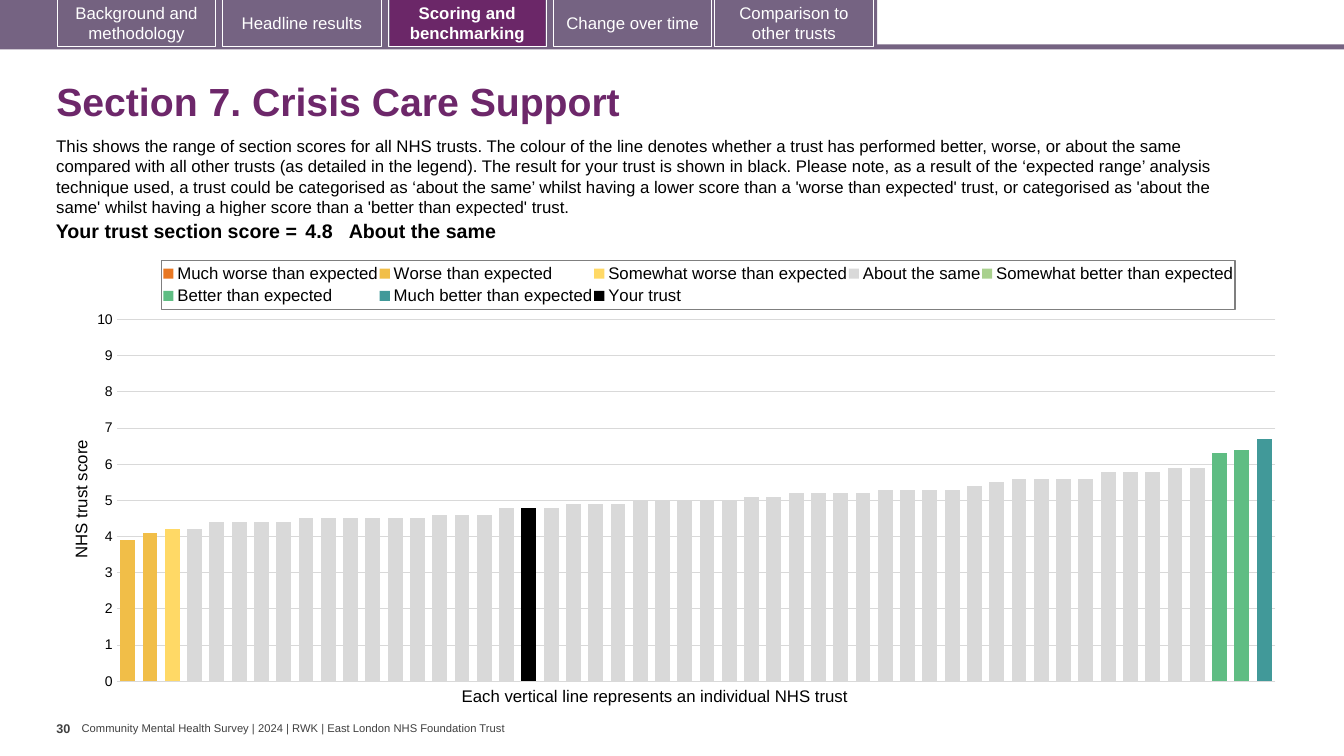
from copy import deepcopy
from lxml.etree import SubElement, Element
from pptx import Presentation
from pptx.chart.data import CategoryChartData
from pptx.dml.color import RGBColor
from pptx.enum.chart import XL_CHART_TYPE, XL_LEGEND_POSITION, XL_TICK_MARK
from pptx.enum.shapes import MSO_SHAPE
from pptx.enum.text import MSO_ANCHOR, PP_ALIGN
from pptx.oxml import parse_xml
from pptx.oxml.ns import nsdecls, qn
from pptx.util import Inches, Pt

INTRO = (
    "This shows the range of section scores for all NHS trusts. The colour of the line "
    "denotes whether a trust has performed better, worse, or about the same compared with "
    "all other trusts (as detailed in the legend). The result for your trust is shown in "
    "black. Please note, as a result of the ‘expected range’ analysis technique used, a "
    "trust could be categorised as ‘about the same’ whilst having a lower score than a "
    "'worse than expected' trust, or categorised as 'about the same' whilst having a higher "
    "score than a 'better than expected' trust."
)
TABS = [
    (0.57, "Background and methodology", "746280"),
    (2.21, "Headline results", None),
    (3.85, "Scoring and benchmarking", None),
    (5.49, "Change over time", "756382"),
    (7.09, "Comparison to other trusts", "756382"),
]
SAME = [
    4.2, 4.4, 4.4, 4.4, 4.4, 4.5, 4.5, 4.5, 4.5, 4.5, 4.5, 4.6, 4.6, 4.6, 4.8, 4.8,
    4.8, 4.9, 4.9, 4.9, 5, 5, 5, 5, 5, 5.1, 5.1, 5.2, 5.2, 5.2, 5.2, 5.3, 5.3, 5.3,
    5.3, 5.4, 5.5, 5.6, 5.6, 5.6, 5.6, 5.8, 5.8, 5.8, 5.9, 5.9,
]
COUNT = 52
BANDS = [
    ("Much worse than expected", "E87722", 0, []),
    ("Worse than expected", "F1BE48", 0, [3.9, 4.1]),
    ("Somewhat worse than expected", "FFD966", 2, [4.2]),
    ("About the same", "D9D9D9", 3, SAME),
    ("Somewhat better than expected", "A9D18E", 0, []),
    ("Better than expected", "5FBD83", 49, [6.3, 6.4]),
    ("Much better than expected", "419999", 51, [6.7]),
    ("Your trust", "000000", 18, [4.8]),
]


def shade(code):
    return RGBColor.from_string(code)


def style(font, size, color="000000", bold=False):
    font.name = "Arial"
    font.size = Pt(size)
    font.bold = bold
    font.color.rgb = shade(color)


def write(frame, text, size=12, color="000000", bold=False, align=PP_ALIGN.LEFT,
          anchor=MSO_ANCHOR.TOP, pad=(0.1, 0.05), space=1.0):
    frame.word_wrap = True
    frame.vertical_anchor = anchor
    frame.margin_left = frame.margin_right = Inches(pad[0])
    frame.margin_top = frame.margin_bottom = Inches(pad[1])
    para = frame.paragraphs[0]
    para.alignment = align
    para.line_spacing = space
    run = para.add_run()
    run.text = text
    style(run.font, size, color, bold)


def label(slide, box, text, **look):
    shape = slide.shapes.add_textbox(*map(Inches, box))
    write(shape.text_frame, text, **look)


def block(slide, box, fill=None, line=None):
    shape = slide.shapes.add_shape(MSO_SHAPE.RECTANGLE, *map(Inches, box))
    shape.shadow.inherit = False
    if fill:
        shape.fill.solid()
        shape.fill.fore_color.rgb = shade(fill)
    else:
        shape.fill.background()
    if line:
        shape.line.color.rgb = shade(line)
        shape.line.width = Pt(0.75)
    else:
        shape.line.fill.background()
    return shape


def header(slide, box, active):
    left, top, width, height = box
    block(slide, (left, top + height - 0.05, width, 0.05), "756382")
    block(slide, (left, top, 8.7, height - 0.02), "756382")
    for start, fill in ((TABS[0][0], "746280"), (TABS[active][0], "6B2768")):
        block(slide, (left + start + 0.02, top, 1.54, 0.46), fill)
    for index, (start, text, fill) in enumerate(TABS):
        tab = block(slide, (left + start, top - 0.01, 1.57, 0.47), fill, "FFFFFF")
        write(tab.text_frame, text, color="FFFFFF", bold=index == active,
              align=PP_ALIGN.CENTER, anchor=MSO_ANCHOR.MIDDLE)


def score(slide, box):
    table = slide.shapes.add_table(1, 3, *map(Inches, box)).table
    table.first_row = table.horz_banding = False
    cells = [
        (2.63, "Your trust section score =", PP_ALIGN.RIGHT, 0.04),
        (0.47, "4.8", PP_ALIGN.LEFT, 0.04),
        (8.59, "About the same", PP_ALIGN.LEFT, 0),
    ]
    for index, (width, text, align, pad) in enumerate(cells):
        table.columns[index].width = Inches(width)
        cell = table.cell(0, index)
        cell.fill.background()
        write(cell.text_frame, text, size=14, bold=True, align=align)
        cell.margin_left = cell.margin_right = Inches(pad)
        cell.margin_top = cell.margin_bottom = Inches(0.04)


def place(node, index, inner=False, **spots):
    for old in node.findall(qn("c:layout")):
        node.remove(old)
    layout = Element(qn("c:layout"))
    manual = SubElement(layout, qn("c:manualLayout"))
    if inner:
        SubElement(manual, qn("c:layoutTarget")).set("val", "inner")
    for key in ("x", "y"):
        SubElement(manual, qn(f"c:{key}Mode")).set("val", "edge")
    for key, value in spots.items():
        SubElement(manual, qn(f"c:{key}")).set("val", str(value))
    node.insert(index, layout)


def key(chart):
    chart.has_legend = True
    legend = chart.legend
    legend.position = XL_LEGEND_POSITION.TOP
    legend.include_in_layout = False
    style(legend.font, 12)
    root = legend._element
    place(root, 1, x=0.077, y=0.025, w=0.876, h=0.11)
    root.find(qn("c:overlay")).addnext(parse_xml(
        f'<c:spPr {nsdecls("c", "a")}><a:ln w="9525"><a:solidFill>'
        '<a:srgbClr val="7F7F7F"/></a:solidFill></a:ln></c:spPr>'))


def second(chart):
    area = chart._chartSpace.chart.plotArea
    bars = area.find(qn("c:barChart"))
    twin = deepcopy(bars)
    bars.remove(bars.findall(qn("c:ser"))[-1])
    for series in twin.findall(qn("c:ser"))[:-1]:
        twin.remove(series)
    bars.addnext(twin)
    for node, code in zip(twin.findall(qn("c:axId")), ("501", "502")):
        node.set("val", code)
    last = area.find(qn("c:valAx"))
    changes = (
        ("c:valAx", {"axId": "502", "crossAx": "501", "axPos": "r", "crosses": "max",
                     "tickLblPos": "none", "majorTickMark": "out"}),
        ("c:catAx", {"axId": "501", "crossAx": "502"}),
    )
    for tag, values in changes:
        axis = deepcopy(area.find(qn(tag)))
        for grid in axis.findall(qn("c:majorGridlines")):
            axis.remove(grid)
        for name, value in values.items():
            axis.find(qn(f"c:{name}")).set("val", value)
        last.addnext(axis)
        last = axis


def graph(slide, box):
    data = CategoryChartData()
    data.categories = [str(n + 1) for n in range(COUNT)]
    for name, _, start, vals in BANDS:
        data.add_series(name, [None] * start + vals + [None] * (COUNT - start - len(vals)))
    chart = slide.shapes.add_chart(
        XL_CHART_TYPE.COLUMN_CLUSTERED, *map(Inches, box), data).chart
    chart.has_title = False
    style(chart.font, 10)
    plot = chart.plots[0]
    plot.gap_width, plot.overlap = 50, 100
    plot.vary_by_categories = False
    for series, (_, color, _, _) in zip(plot.series, BANDS):
        series.format.fill.solid()
        series.format.fill.fore_color.rgb = shade(color)
    chart.category_axis.visible = False
    axis = chart.value_axis
    axis.minimum_scale, axis.maximum_scale, axis.major_unit = 0, 10, 1
    axis.major_tick_mark = XL_TICK_MARK.NONE
    axis.format.line.fill.background()
    second(chart)
    axis.major_gridlines.format.line.color.rgb = shade("D9D9D9")
    axis.major_gridlines.format.line.width = Pt(0.75)
    style(axis.tick_labels.font, 10)
    run = axis.axis_title.text_frame.paragraphs[0].add_run()
    run.text = "NHS trust score"
    style(run.font, 12)
    place(axis.axis_title._element, 1, x=0, y=0.42)
    place(chart._chartSpace.chart.plotArea, 0, inner=True,
          x=0.04, y=0.158, w=0.946, h=0.808)
    key(chart)


def footer(slide, box):
    left, top, width, height = box
    label(slide, (left, top, 0.25, height), "30", size=9, color="404040",
          bold=True, pad=(0, 0.05))
    label(slide, (left + 0.25, top + 0.06, width - 0.25, 0.13),
          "Community Mental Health Survey | 2024 | RWK | East London NHS Foundation Trust",
          size=8, color="404040", anchor=MSO_ANCHOR.MIDDLE, pad=(0, 0))


def main():
    deck = Presentation()
    deck.slide_width, deck.slide_height = Inches(13.33), Inches(7.5)
    slide = deck.slides.add_slide(deck.slide_layouts[6])
    header(slide, (0, 0, 13.33, 0.49), active=2)
    label(slide, (0.46, 0.67, 12.49, 0.72), "Section 7. Crisis Care Support", size=28,
          color="6D276A", bold=True, anchor=MSO_ANCHOR.MIDDLE, space=0.9)
    label(slide, (0.46, 1.3, 12.13, 0.91), INTRO)
    graph(slide, (0.67, 2.47, 12.15, 4.44))
    label(slide, (4.48, 6.75, 4.11, 0.3),
          "Each vertical line represents an individual NHS trust")
    score(slide, (0.36, 2.15, 11.69, 0.31))
    footer(slide, (0.56, 7.1, 4.75, 0.4))
    deck.save("out.pptx")


if __name__ == "__main__":
    main()
